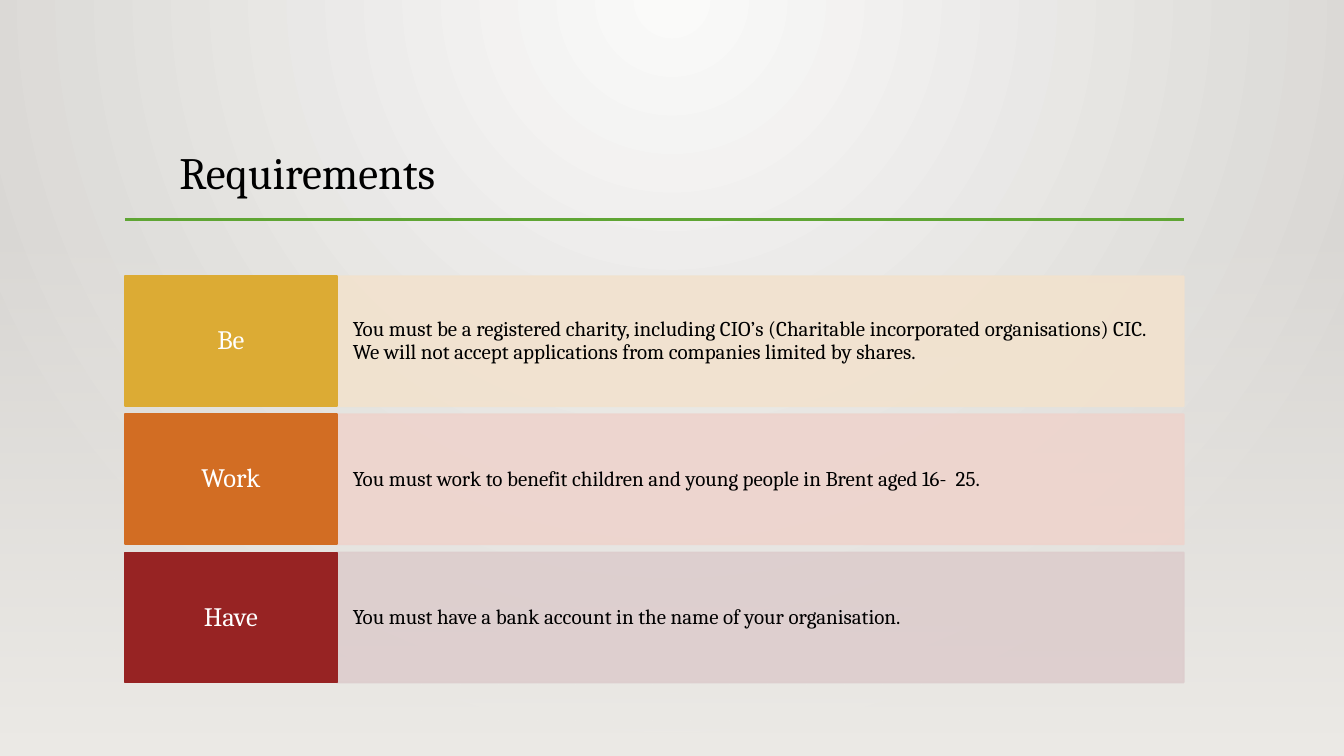
import pptx
import pptx.dml.color
import pptx.enum.shapes
import pptx.enum.text
import pptx.oxml
import pptx.oxml.ns
import pptx.util
from pptx.util import Inches

RGBColor = pptx.dml.color.RGBColor
ALIGN = pptx.enum.text.PP_ALIGN
ANCHOR = pptx.enum.text.MSO_ANCHOR
qn = pptx.oxml.ns.qn

FONT = "Cambria"
BLACK = RGBColor(0x00, 0x00, 0x00)
WHITE = RGBColor(0xFF, 0xFF, 0xFF)
GREEN = RGBColor(0x5F, 0xA5, 0x34)
GLOW = RGBColor(0xFA, 0xFA, 0xF9)
GREY = RGBColor(0xD7, 0xD5, 0xD2)
FLOOR = RGBColor(0xED, 0xEB, 0xE7)
GOLD = RGBColor(0xDC, 0xAB, 0x34)
ORANGE = RGBColor(0xD2, 0x6D, 0x23)
RED = RGBColor(0x97, 0x23, 0x23)
PALE_GOLD = RGBColor(0xF2, 0xE2, 0xCE)
PALE_ORANGE = RGBColor(0xEE, 0xD4, 0xCD)
PALE_RED = RGBColor(0xDD, 0xCD, 0xCD)

REQUIREMENTS = [
    ("Be", "You must be a registered charity, including CIO’s (Charitable incorporated "
     "organisations) CIC. We will not accept applications from companies limited by shares.",
     GOLD, PALE_GOLD),
    ("Work", "You must work to benefit children and young people in Brent aged 16-  25.",
     ORANGE, PALE_ORANGE),
    ("Have", "You must have a bank account in the name of your organisation.",
     RED, PALE_RED),
]
LEFT, LABEL_WIDTH, DETAIL_WIDTH = 1.24, 2.1, 8.4
TOP, ROW_HEIGHT, ROW_STEP = 2.74, 1.29, 1.37


def set_alpha(colour, percent):
    alpha = pptx.oxml.parse_xml(f'<a:alpha {pptx.oxml.ns.nsdecls("a")}/>')
    alpha.set("val", str(percent * 1000))
    colour.append(alpha)


def set_gradient(fill, start, end):
    fill.gradient()
    fill.gradient_angle = 270
    for stop, colour, position in zip(fill.gradient_stops, (start, end), (0, 1)):
        stop.color.rgb = colour
        stop.position = position


def add_background(slide):
    """Fill the slide with a glow that spreads from the middle of its top edge."""
    set_gradient(slide.background.fill, GLOW, GREY)
    gradient = next(slide._element.iter(qn("a:gradFill")))
    glow = pptx.oxml.parse_xml(
        f'<a:path {pptx.oxml.ns.nsdecls("a")} path="circle">'
        '<a:fillToRect l="43000" t="0" r="43000" b="100000"/></a:path>')
    gradient.replace(gradient.find(qn("a:lin")), glow)


def add_rectangle(slide, left, top, width, height):
    rectangle = slide.shapes.add_shape(
        pptx.enum.shapes.MSO_SHAPE.RECTANGLE,
        Inches(left), Inches(top), Inches(width), Inches(height))
    rectangle.shadow.inherit = False
    return rectangle


def add_floor(slide):
    """Fade the lower part of the slide into a lighter tone."""
    floor = add_rectangle(slide, 0, 2.21, 13.33, 5.29)
    floor.line.fill.background()
    set_gradient(floor.fill, FLOOR, FLOOR)
    set_alpha(next(floor._element.spPr.iter(qn("a:srgbClr"))), 0)


def write_text(frame, text, size, colour, align, anchor):
    frame.word_wrap = True
    frame.vertical_anchor = anchor
    frame.text = text
    paragraph = frame.paragraphs[0]
    paragraph.alignment = align
    paragraph.line_spacing = 0.9
    font = paragraph.runs[0].font
    font.name = FONT
    font.size = pptx.util.Pt(size)
    font.color.rgb = colour


def add_title(slide, text):
    title = slide.shapes.add_textbox(Inches(1.68), Inches(0.88), Inches(10.41), Inches(1.15))
    write_text(title.text_frame, text, 32, BLACK, ALIGN.LEFT, ANCHOR.BOTTOM)


def add_rule(slide):
    right = LEFT + LABEL_WIDTH + DETAIL_WIDTH
    rule = slide.shapes.add_connector(
        pptx.enum.shapes.MSO_CONNECTOR.STRAIGHT,
        Inches(LEFT), Inches(2.18), Inches(right), Inches(2.18))
    rule.line.color.rgb = GREEN
    rule.line.width = pptx.util.Pt(2.5)
    rule._element.spPr.append(
        pptx.oxml.parse_xml(f'<a:effectLst {pptx.oxml.ns.nsdecls("a")}/>'))


def add_panel(slide, left, top, width, colour, margins):
    panel = add_rectangle(slide, left, top, width, ROW_HEIGHT)
    panel.fill.solid()
    panel.fill.fore_color.rgb = colour
    panel.line.color.rgb = colour
    panel.line.width = pptx.util.Pt(1.25)
    frame = panel.text_frame
    frame.margin_left = frame.margin_right = Inches(margins[0])
    frame.margin_top = frame.margin_bottom = Inches(margins[1])
    return panel


def add_requirement(slide, top, label, detail, strong, pale):
    detail_panel = add_panel(slide, LEFT + LABEL_WIDTH, top, DETAIL_WIDTH, pale, (0.16, 0.33))
    for colour in detail_panel._element.spPr.iter(qn("a:srgbClr")):
        set_alpha(colour, 90)
    write_text(detail_panel.text_frame, detail, 15, BLACK, ALIGN.LEFT, ANCHOR.MIDDLE)
    label_panel = add_panel(slide, LEFT, top, LABEL_WIDTH, strong, (0.11, 0.13))
    write_text(label_panel.text_frame, label, 19, WHITE, ALIGN.CENTER, ANCHOR.MIDDLE)


def main():
    deck = pptx.Presentation()
    deck.slide_width, deck.slide_height = Inches(13.33), Inches(7.5)
    slide = deck.slides.add_slide(deck.slide_layouts[6])
    add_background(slide)
    add_title(slide, "Requirements")
    add_rule(slide)
    add_floor(slide)
    for row, requirement in enumerate(REQUIREMENTS):
        add_requirement(slide, TOP + row * ROW_STEP, *requirement)
    deck.save("out.pptx")


if __name__ == "__main__":
    main()
